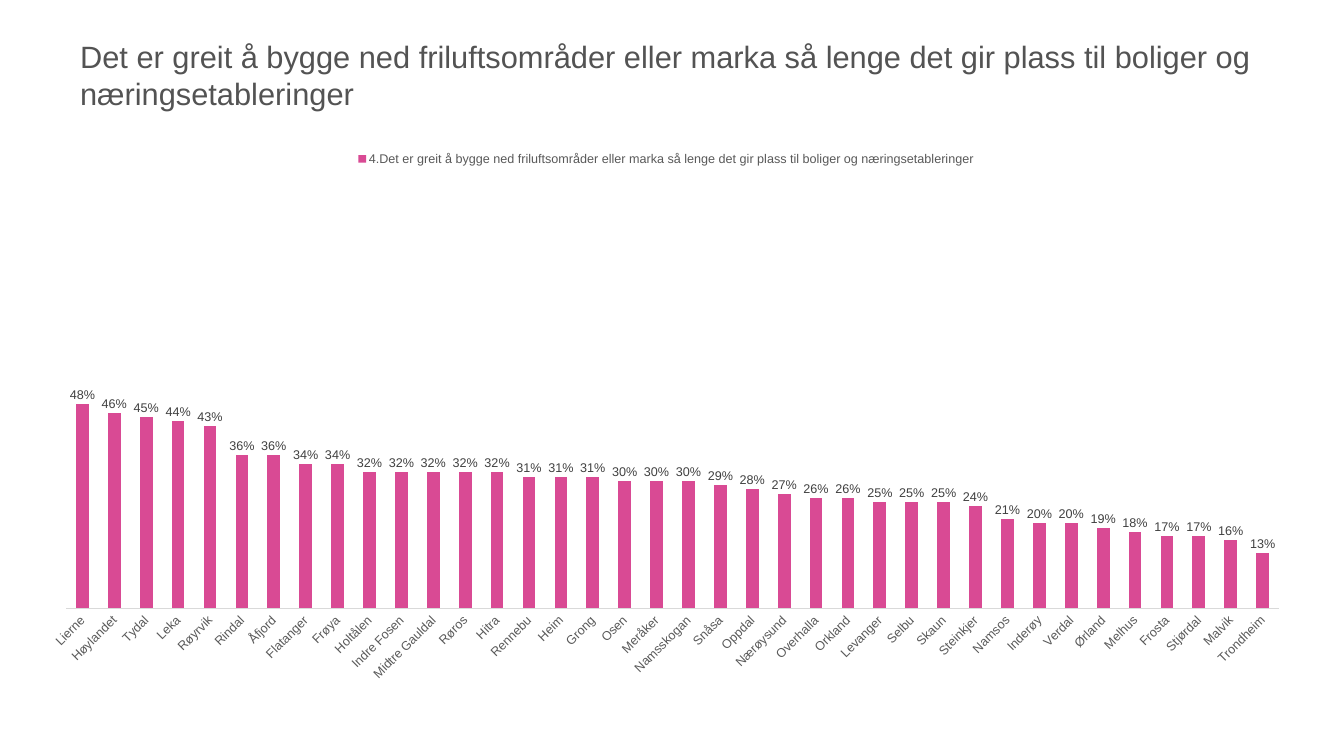
from dataclasses import dataclass

from lxml import etree
from pptx import Presentation
from pptx.chart.data import CategoryChartData
from pptx.dml.color import RGBColor
from pptx.enum.chart import XL_CHART_TYPE as ChartType
from pptx.enum.chart import XL_LABEL_POSITION as LabelPosition
from pptx.enum.chart import XL_LEGEND_POSITION as LegendPosition
from pptx.enum.chart import XL_TICK_LABEL_POSITION as TickLabels
from pptx.enum.chart import XL_TICK_MARK as TickMark
from pptx.enum.text import MSO_ANCHOR as Anchor
from pptx.oxml.ns import qn
from pptx.util import Inches, Pt


@dataclass(frozen=True)
class Theme:
    font: str = "Arial"
    title_size: int = 44
    chart_size: int = 18
    title: str = "535353"
    axis_text: str = "595959"
    label_text: str = "404040"
    axis_line: str = "D9D9D9"
    bar: str = "D94A94"


STATEMENT = ("Det er greit å bygge ned friluftsområder eller marka så lenge "
             "det gir plass til boliger og næringsetableringer")

PERCENT_BY_MUNICIPALITY = {
    "Lierne": 48, "Høylandet": 46, "Tydal": 45, "Leka": 44, "Røyrvik": 43,
    "Rindal": 36, "Åfjord": 36, "Flatanger": 34, "Frøya": 34, "Holtålen": 32,
    "Indre Fosen": 32, "Midtre Gauldal": 32, "Røros": 32, "Hitra": 32,
    "Rennebu": 31, "Heim": 31, "Grong": 31, "Osen": 30, "Meråker": 30,
    "Namsskogan": 30, "Snåsa": 29, "Oppdal": 28, "Nærøysund": 27,
    "Overhalla": 26, "Orkland": 26, "Levanger": 25, "Selbu": 25, "Skaun": 25,
    "Steinkjer": 24, "Namsos": 21, "Inderøy": 20, "Verdal": 20, "Ørland": 19,
    "Melhus": 18, "Frosta": 17, "Stjørdal": 17, "Malvik": 16, "Trondheim": 13,
}


class PageBuilder:
    def __init__(self, page, theme):
        self.page = page
        self.theme = theme

    def style_font(self, font, size, color):
        font.name = self.theme.font
        font.size = Pt(size)
        font.color.rgb = RGBColor.from_string(color)

    def title(self, text, left, top, width, height):
        box = self.page.shapes.add_textbox(
            Inches(left), Inches(top), Inches(width), Inches(height))
        frame = box.text_frame
        frame.word_wrap = True
        frame.vertical_anchor = Anchor.MIDDLE
        frame.margin_left = frame.margin_right = Inches(0.06)
        frame.margin_top = frame.margin_bottom = Inches(0.06)
        para = frame.paragraphs[0]
        para.text = text
        self.style_font(para.font, self.theme.title_size, self.theme.title)

    def column_chart(self, name, percents, left, top, width, height):
        data = CategoryChartData(number_format="0%")
        data.categories = percents.keys()
        data.add_series(name, [percent / 100 for percent in percents.values()])
        chart = self.page.shapes.add_chart(
            ChartType.COLUMN_CLUSTERED, Inches(left), Inches(top),
            Inches(width), Inches(height), data).chart
        theme = self.theme
        self.style_font(chart.font, theme.chart_size, theme.axis_text)
        chart.has_title = False
        chart.has_legend = True
        chart.legend.position = LegendPosition.TOP
        chart.legend.include_in_layout = False
        self.style_font(chart.legend.font, theme.chart_size, theme.axis_text)
        self.style_axes(chart)
        self.style_bars(chart.plots[0])
        self.place_plot(chart, x=0.03, y=0.07, w=0.95, h=0.78)

    def style_axes(self, chart):
        theme = self.theme
        categories = chart.category_axis
        categories.major_tick_mark = categories.minor_tick_mark = TickMark.NONE
        categories.tick_label_position = TickLabels.LOW
        categories.format.line.color.rgb = RGBColor.from_string(theme.axis_line)
        categories.format.line.width = Pt(0.75)
        self.style_font(categories.tick_labels.font, theme.chart_size,
                        theme.axis_text)
        body = categories._element.find(qn("c:txPr")).find(qn("a:bodyPr"))
        body.set("rot", "-2700000")
        values = chart.value_axis
        values.minimum_scale, values.maximum_scale = 0, 1
        values.has_major_gridlines = False
        values.visible = False

    def style_bars(self, plot):
        theme = self.theme
        plot.gap_width = 150
        plot.overlap = -25
        plot.vary_by_categories = False
        bars = plot.series[0]
        bars.format.fill.solid()
        bars.format.fill.fore_color.rgb = RGBColor.from_string(theme.bar)
        labels = bars.data_labels
        labels.show_value = True
        labels.number_format = "0%"
        labels.number_format_is_linked = False
        labels.position = LabelPosition.OUTSIDE_END
        self.style_font(labels.font, theme.chart_size, theme.label_text)

    def place_plot(self, chart, **fractions):
        """Fix the inner plot area as fractions of the chart's size."""
        area = chart._chartSpace.chart.plotArea
        for old in area.findall(qn("c:layout")):
            area.remove(old)
        layout = etree.Element(qn("c:layout"))
        area.insert(0, layout)
        manual = etree.SubElement(layout, qn("c:manualLayout"))
        settings = {"layoutTarget": "inner", "xMode": "edge", "yMode": "edge",
                    **fractions}
        for tag, value in settings.items():
            etree.SubElement(manual, qn(f"c:{tag}"), val=str(value))


def main():
    deck = Presentation()
    deck.slide_width, deck.slide_height = Inches(26.67), Inches(15)
    page = deck.slides.add_slide(deck.slide_layouts[6])
    builder = PageBuilder(page, Theme())
    builder.title(STATEMENT, 1.53, 0.47, 24.58, 2.04)
    builder.column_chart(f"4.{STATEMENT}", PERCENT_BY_MUNICIPALITY,
                         0.56, 2.89, 25.32, 10.8)
    deck.save("out.pptx")


if __name__ == "__main__":
    main()
